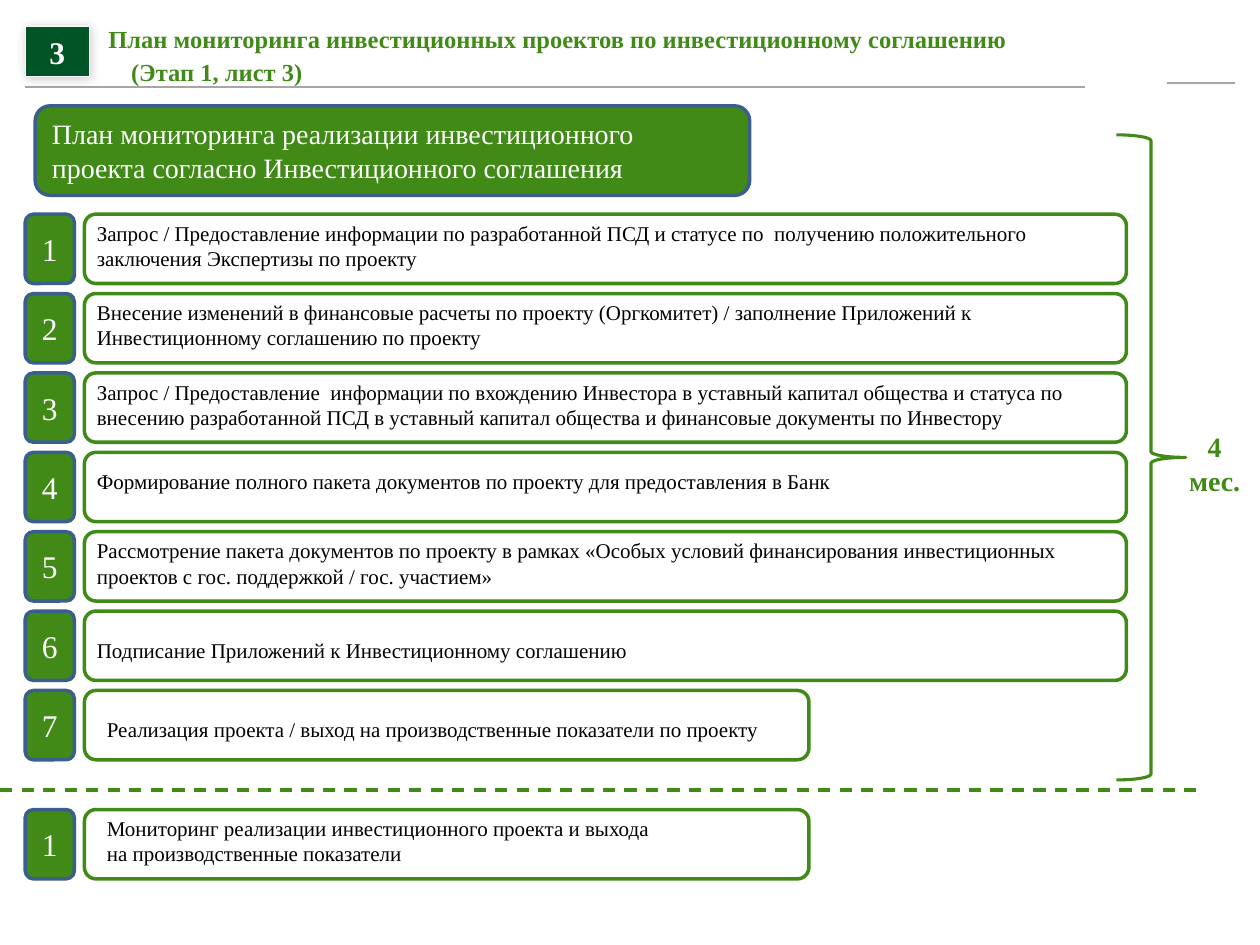
from dataclasses import dataclass

from lxml import etree
from pptx import Presentation
from pptx.dml.color import RGBColor
from pptx.enum.dml import MSO_LINE
from pptx.enum.shapes import MSO_CONNECTOR, MSO_SHAPE
from pptx.enum.text import MSO_ANCHOR, MSO_AUTO_SIZE, PP_ALIGN
from pptx.oxml.ns import qn
from pptx.util import Inches, Pt

RECTANGLE = MSO_SHAPE.RECTANGLE
ROUNDED = MSO_SHAPE.ROUNDED_RECTANGLE
BRACE = MSO_SHAPE.RIGHT_BRACE
STRAIGHT = MSO_CONNECTOR.STRAIGHT
DASH = MSO_LINE.DASH
TOP, MIDDLE = MSO_ANCHOR.TOP, MSO_ANCHOR.MIDDLE
LEFT, CENTER = PP_ALIGN.LEFT, PP_ALIGN.CENTER
GROW = MSO_AUTO_SIZE.SHAPE_TO_FIT_TEXT

WIDTH, HEIGHT = Inches(10), Inches(7.5)
COLUMNS, ROWS = 100, 75
STEP_TOP, STEP_PITCH, STEP_HEIGHT = 17, 6.3, 5.5
NUMBER_LEFT, NUMBER_WIDTH = 2, 3.9
FRAME_LEFT, WIDE, NARROW = 6.7, 82.7, 57.5


@dataclass(frozen=True)
class Theme:
    """Colours, font and type sizes of the slide."""
    font: str = "Times New Roman"
    green: str = "418A18"
    dark_green: str = "005426"
    blue: str = "3A5F8C"
    grey: str = "A6A6A6"
    white: str = "FFFFFF"
    black: str = "000000"
    number_size: int = 18
    heading_size: int = 16
    title_size: int = 14
    body_size: int = 12


THEME = Theme()

# Each step: row, number, text, frame width, text left, text drop, wrap
STEPS = [
    (0, "1", "Запрос / Предоставление информации по разработанной ПСД и статусе по  получению "
     "положительного заключения Экспертизы по проекту", WIDE, FRAME_LEFT, 0, True),
    (1, "2", "Внесение изменений в финансовые расчеты по проекту (Оргкомитет) / заполнение "
     "Приложений к Инвестиционному соглашению по проекту", WIDE, FRAME_LEFT, 0, True),
    (2, "3", "Запрос / Предоставление  информации по вхождению Инвестора в уставный капитал "
     "общества и статуса по внесению разработанной ПСД в уставный капитал общества и "
     "финансовые документы по Инвестору", WIDE, FRAME_LEFT, 0, True),
    (3, "4", "Формирование полного пакета документов по проекту для предоставления в Банк",
     WIDE, FRAME_LEFT, 0.8, True),
    (4, "5", "Рассмотрение пакета документов по проекту в рамках «Особых условий финансирования "
     "инвестиционных проектов с гос. поддержкой / гос. участием»", WIDE, FRAME_LEFT, 0, True),
    (5, "6", "Подписание Приложений к Инвестиционному соглашению",
     WIDE, FRAME_LEFT, 1.6, True),
    (6, "7", "Реализация проекта / выход на производственные показатели по проекту",
     NARROW, 7.5, 1.6, False),
    (7.5, "1", "Мониторинг реализации инвестиционного проекта и выхода\n"
     "на производственные показатели", NARROW, 7.5, 0, True),
]


def grid(*lengths):
    """Turn alternating column and row counts into slide lengths."""
    units = (WIDTH / COLUMNS, HEIGHT / ROWS)
    return [round(length * units[index % 2]) for index, length in enumerate(lengths)]


def write_text(shape, text, size, color, bold=False, align=LEFT, anchor=TOP,
               wrap=True, grow=False, spacing=None):
    """Fill a shape with formatted text, one paragraph a line."""
    frame = shape.text_frame
    frame.text = text
    frame.word_wrap = wrap
    frame.vertical_anchor = anchor
    if grow:
        frame.auto_size = GROW
    for paragraph in frame.paragraphs:
        paragraph.alignment = align
        paragraph.line_spacing = spacing
        for run in paragraph.runs:
            run.font.name = THEME.font
            run.font.size = Pt(size)
            run.font.bold = bold
            run.font.color.rgb = RGBColor.from_string(color)


def add_panel(slide, kind, box, line, weight, fill=None):
    """Add a preset shape with an outline and an optional fill."""
    shape = slide.shapes.add_shape(kind, *grid(*box))
    shape.shadow.inherit = False
    shape.line.color.rgb = RGBColor.from_string(line)
    shape.line.width = Pt(weight)
    if fill:
        shape.fill.solid()
        shape.fill.fore_color.rgb = RGBColor.from_string(fill)
    else:
        shape.fill.background()
    return shape


def add_label(slide, box, text, size, color, **options):
    """Add a text box."""
    label = slide.shapes.add_textbox(*grid(*box))
    write_text(label, text, size, color, **options)
    return label


def add_rule(slide, ends, color, weight, dash=None):
    """Add a straight line without a shadow."""
    rule = slide.shapes.add_connector(STRAIGHT, *grid(*ends))
    rule.line.color.rgb = RGBColor.from_string(color)
    rule.line.width = Pt(weight)
    rule.line.dash_style = dash
    etree.SubElement(rule.element.spPr, qn("a:effectLst"))


def add_soft_shadow(shape):
    """Give a shape a faint diagonal shadow."""
    effects = shape.element.spPr.find(qn("a:effectLst"))
    shadow = etree.SubElement(effects, qn("a:outerShdw"), blurRad=str(Pt(6)),
                              dist=str(Pt(1)), dir="2700000", algn="tl", rotWithShape="0")
    color = etree.SubElement(shadow, qn("a:srgbClr"), val=THEME.black)
    etree.SubElement(color, qn("a:alpha"), val="20000")


def add_title(slide):
    """Add the sheet number, the title with a set-in second line and the rules."""
    add_rule(slide, (2, 6.9, 86.1, 6.9), THEME.grey, 1)
    add_rule(slide, (92.6, 6.6, 98, 6.6), THEME.grey, 1)
    title = add_label(
        slide, (7.5, 1.3, 75.3, 5.8),
        "План мониторинга инвестиционных проектов по инвестиционному соглашению (Этап 1, лист 3)",
        THEME.title_size, THEME.green, bold=True, anchor=MIDDLE, spacing=1.15)
    frame = title.text_frame
    frame.margin_left = frame.margin_right = frame.margin_top = frame.margin_bottom = 0
    properties = frame.paragraphs[0]._p.get_or_add_pPr()
    properties.set("marL", str(Inches(0.29)))
    properties.set("indent", str(Inches(-0.18)))
    badge = add_panel(slide, RECTANGLE, (2, 2.1, 5.1, 4), THEME.white, 0.75, THEME.dark_green)
    add_soft_shadow(badge)
    write_text(badge, "3", THEME.number_size, THEME.white, bold=True, align=CENTER,
               grow=True)


def add_step(slide, row, number, text, frame_width, text_left, drop, wrap):
    """Add a numbered step: number tile, frame and description."""
    top = STEP_TOP + row * STEP_PITCH
    tile = add_panel(slide, ROUNDED, (NUMBER_LEFT, top, NUMBER_WIDTH, STEP_HEIGHT),
                     THEME.blue, 2, THEME.green)
    write_text(tile, number, THEME.number_size, THEME.white, align=CENTER, anchor=MIDDLE)
    add_panel(slide, ROUNDED, (FRAME_LEFT, top, frame_width, STEP_HEIGHT), THEME.green, 2)
    text_width = FRAME_LEFT + frame_width - text_left - (0.8 if frame_width == WIDE else 0)
    if not wrap:
        text_width = 54.3
    add_label(slide, (text_left, top + drop, text_width, 3 if drop else 5), text,
              THEME.body_size, THEME.black, wrap=wrap, grow=True)


def main():
    """Build the monitoring plan slide and save it."""
    presentation = Presentation()
    presentation.slide_width, presentation.slide_height = WIDTH, HEIGHT
    slide = presentation.slides.add_slide(presentation.slide_layouts[6])
    add_title(slide)
    heading = add_panel(slide, ROUNDED, (2.8, 8.4, 56.7, 7.1), THEME.blue, 2, THEME.green)
    write_text(heading, "План мониторинга реализации инвестиционного проекта согласно "
               "Инвестиционного соглашения", THEME.heading_size, THEME.white, anchor=MIDDLE)
    for step in STEPS:
        add_step(slide, *step)
    add_panel(slide, BRACE, (88.6, 10.7, 5.5, 51.2), THEME.green, 1.75)
    add_label(slide, (93.3, 33.6, 6.2, 6.4), "4\nмес.", THEME.heading_size, THEME.green,
              bold=True, align=CENTER, wrap=False, grow=True)
    add_rule(slide, (0, 62.7, 94.9, 62.7), THEME.green, 1.75, DASH)
    presentation.save("out.pptx")


if __name__ == "__main__":
    main()
